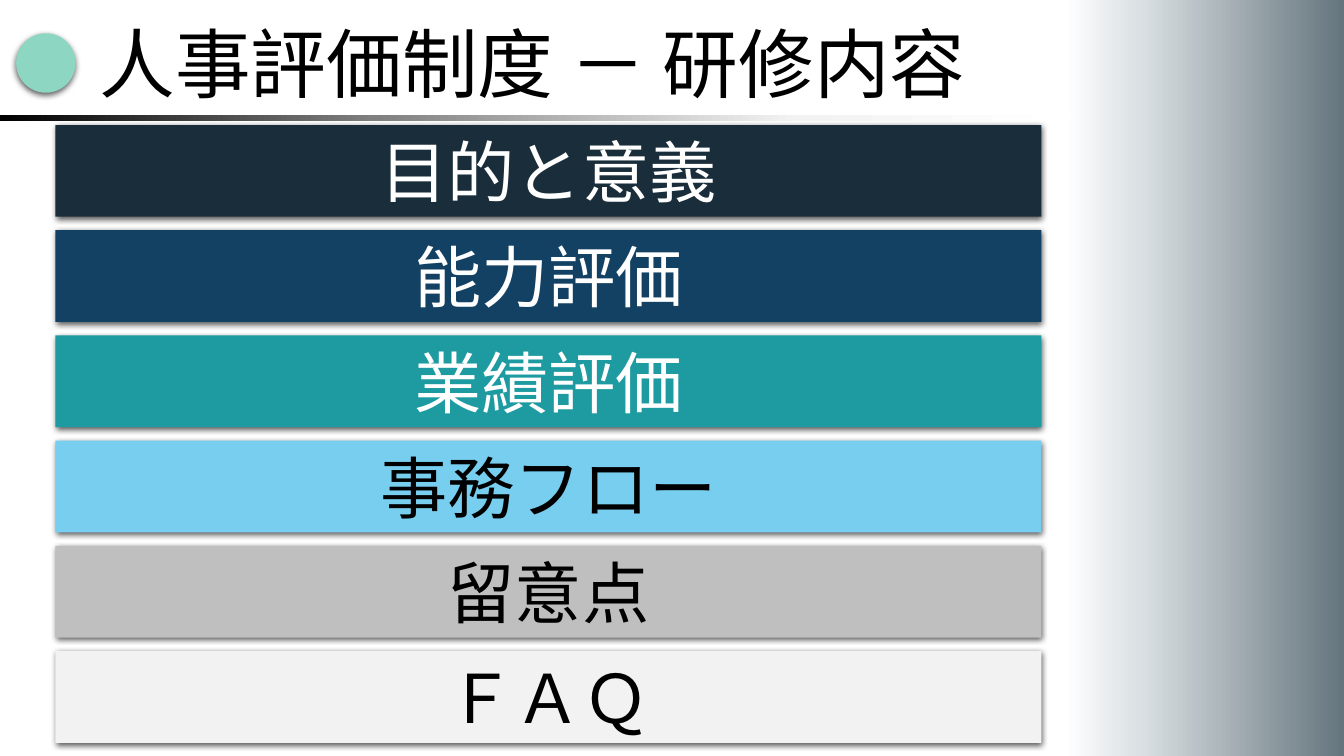
from lxml import etree
from pptx import Presentation
from pptx.dml.color import RGBColor
from pptx.enum.shapes import MSO_SHAPE
from pptx.enum.text import MSO_ANCHOR, PP_ALIGN
from pptx.oxml.ns import qn
from pptx.util import Inches, Pt

RECT, OVAL = MSO_SHAPE.RECTANGLE, MSO_SHAPE.OVAL
LEFT, CENTER = PP_ALIGN.LEFT, PP_ALIGN.CENTER
MIDDLE = MSO_ANCHOR.MIDDLE

BLACK = RGBColor(0x00, 0x00, 0x00)
WHITE = RGBColor(0xFF, 0xFF, 0xFF)
NAVY = RGBColor(0x1A, 0x2D, 0x3A)
BLUE = RGBColor(0x13, 0x41, 0x63)
TEAL = RGBColor(0x1D, 0x9B, 0xA1)
SKY = RGBColor(0x77, 0xCE, 0xEF)
GRAY = RGBColor(0xBF, 0xBF, 0xBF)
PALE = RGBColor(0xF2, 0xF2, 0xF2)
MINT = RGBColor(0x8D, 0xD6, 0xC1)
SLATE = RGBColor(0x65, 0x75, 0x7D)
MIST = RGBColor(0xDA, 0xE0, 0xE3)
MID = RGBColor(0x80, 0x80, 0x80)

# Content
FONT = "Noto Sans CJK JP"
TITLE = "人事評価制度 － 研修内容"
TOPICS = [
    ("目的と意義", NAVY, WHITE),
    ("能力評価", BLUE, WHITE),
    ("業績評価", TEAL, WHITE),
    ("事務フロー", SKY, BLACK),
    ("留意点", GRAY, BLACK),
    ("ＦＡＱ", PALE, BLACK),
]
PANEL = [(0, WHITE), (27, MIST), (100, SLATE)]
RULE = [(0, BLACK), (35, MID), (74, PALE), (100, WHITE)]

# Layout in inches
WIDE, HIGH = 13.33, 7.5
SIDE = 2.77
BAR_X, BAR_W, BAR_H = 0.55, 9.78, 0.91
TOP, LAST = 1.24, 6.46
STEP = (LAST - TOP) / (len(TOPICS) - 1)

deck = Presentation()
deck.slide_width, deck.slide_height = Inches(WIDE), Inches(HIGH)
slide = deck.slides.add_slide(deck.slide_layouts[6])


def write(box, text, size=48, color=BLACK, align=CENTER):
    frame = box.text_frame
    frame.word_wrap = True
    frame.vertical_anchor = MIDDLE
    para = frame.paragraphs[0]
    para.alignment = align
    run = para.add_run()
    run.text = text
    font = run.font
    font.size, font.name = Pt(size), FONT
    font.color.rgb = color
    east = etree.SubElement(run._r.get_or_add_rPr(), qn("a:ea"))
    east.set("typeface", FONT)


def add(kind, *place):
    shape = slide.shapes.add_shape(kind, *map(Inches, place))
    shape.shadow.inherit = False
    shape.line.fill.background()
    return shape


def solid(kind, color, *place):
    """Plain shape with a soft shadow below it."""
    shape = add(kind, *place)
    shape.fill.solid()
    shape.fill.fore_color.rgb = color
    effects = shape._element.spPr.find(qn("a:effectLst"))
    shade = etree.SubElement(
        effects, qn("a:outerShdw"), blurRad=str(Pt(4.5)), dist=str(Pt(1.5)),
        dir="5400000", algn="ctr", rotWithShape="0")
    tone = etree.SubElement(shade, qn("a:srgbClr"), val=str(BLACK))
    etree.SubElement(tone, qn("a:alpha"), val="63000")
    return shape


def blend(stops, *place):
    """Rectangle with a left-to-right gradient."""
    shape = add(RECT, *place)
    shape.fill.gradient()
    shape.fill.gradient_angle = 0
    marks = shape._element.spPr.find(".//" + qn("a:gsLst"))
    for old in list(marks):
        marks.remove(old)
    for share, color in stops:
        stop = etree.SubElement(marks, qn("a:gs"), pos=str(share * 1000))
        etree.SubElement(stop, qn("a:srgbClr"), val=str(color))


# Side panel
blend(PANEL, WIDE - SIDE, 0, SIDE, HIGH)

# Heading
solid(OVAL, MINT, 0.16, 0.33, 0.59, 0.59)
head = slide.shapes.add_textbox(*map(Inches, (0.89, 0.28, 12.28, 0.67)))
write(head, TITLE, size=54, align=LEFT)
blend(RULE, 0, 1.14, 10.63, 0.06)

# Topic bars
for row, (text, fill, ink) in enumerate(TOPICS):
    bar = solid(RECT, fill, BAR_X, TOP + row * STEP, BAR_W, BAR_H)
    write(bar, text, color=ink)

deck.save("out.pptx")
